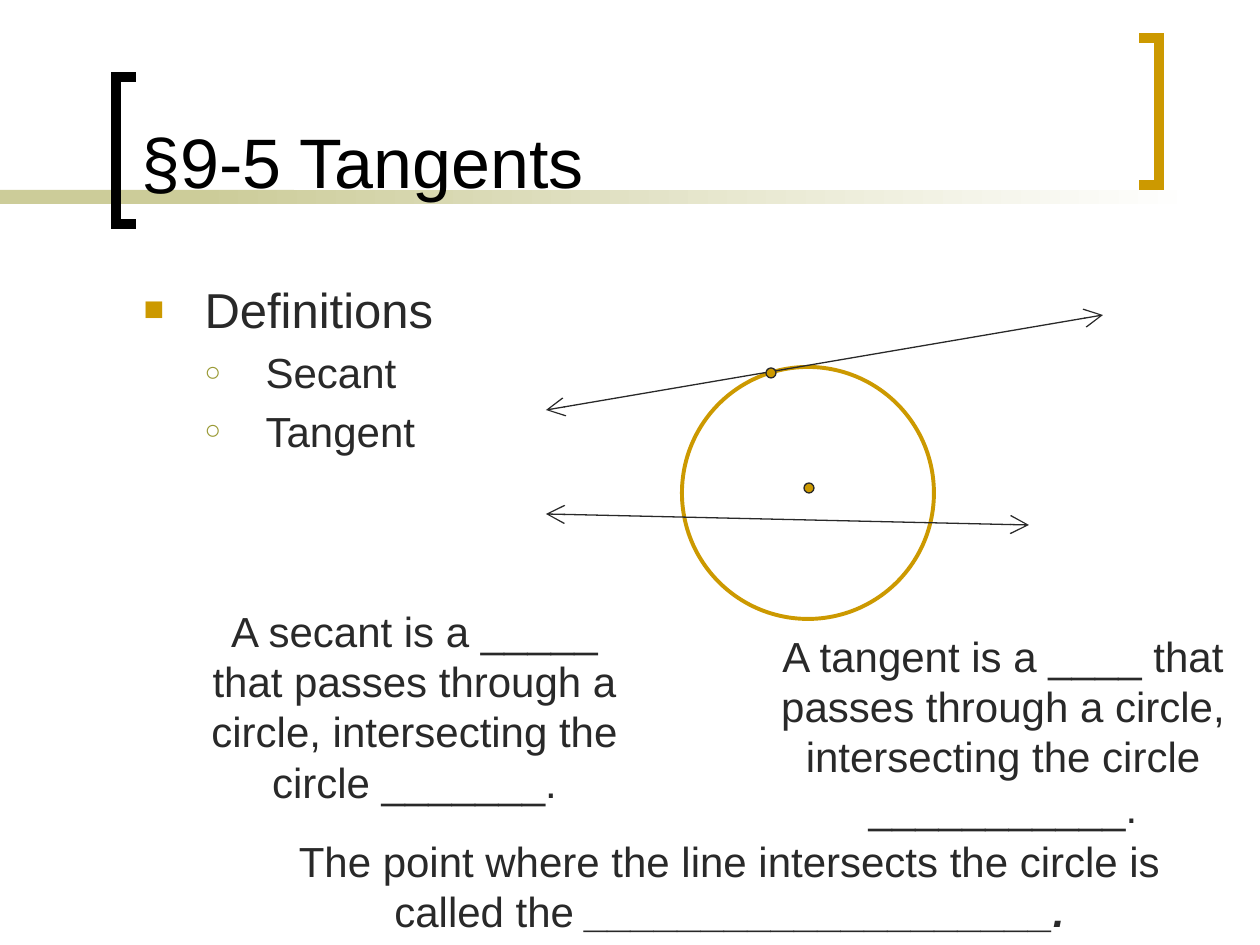
from lxml import etree
from pptx import Presentation, util as u
from pptx.dml.color import RGBColor
from pptx.enum import shapes, text
from pptx.oxml.ns import qn

BLACK = RGBColor(0x00, 0x00, 0x00)
INK = RGBColor(0x29, 0x29, 0x29)
GOLD = RGBColor(0xCC, 0x99, 0x00)
OLIVE = RGBColor(0x99, 0x99, 0x33)
SAND = RGBColor(0xCC, 0xCC, 0x99)
WHITE = RGBColor(0xFF, 0xFF, 0xFF)
FONT = "Arial"
PX = 914400 / 126

# All places are left, top, width, height in px.
TITLE = "§9-5 Tangents"
TITLE_BOX = (129, 14, 987, 195)
OUTLINE_BOX = (131, 273, 467, 630)
# text, level
OUTLINE = [("Definitions", 0), ("Secant", 1), ("Tangent", 1)]
# size in pt, indent in px, hanging in px, bullet, colour, bullet size in %
LEVELS = [(28, 61, 61, "■", GOLD, 70), (24, 122, 61, "○", OLIVE, 65)]

BANDS = [((0, 190, 294, 14), SAND), ((199, 190, 998, 14), WHITE)]  # box, end colour
# open side x, spine x, top, bottom, colour
BRACKETS = [(136, 116, 77, 224, BLACK), (1139, 1159, 38, 185, GOLD)]

CIRCLE = (682, 367, 252, 252)
CENTRE_POINT = (809, 488)
TANGENT_POINT = (771, 373)
POINT_SIZE = 10
SECANT_LINE = (546, 514, 1029, 525)
TANGENT_LINE = (546, 410, 1103, 315)

# box, runs of text with emphasis
STATEMENTS = [
    ((199, 599, 431, 217),
     [("A secant is a _____ that passes through a circle, intersecting the circle _______.", False)]),
    ((766, 624, 474, 217),
     [("A tangent is a ____ that passes through a circle, intersecting the circle ___________.", False)]),
    ((252, 829, 955, 115),
     [("The point where the line intersects the circle is called the ", False),
      ("____________________.", True)]),
]


def px(*values):
    return [u.Emu(round(value * PX)) for value in values]


def style(font, size, color):
    font.name, font.size, font.color.rgb = FONT, u.Pt(size), color


def add_child(parent, tag, **attributes):
    return etree.SubElement(parent, qn(tag), attributes)


def place(shape, box):
    shape.left, shape.top, shape.width, shape.height = px(*box)


def add_bands(slide):
    for box, end_color in BANDS:
        band = slide.shapes.add_shape(shapes.MSO_SHAPE.RECTANGLE, *px(*box))
        band.shadow.inherit = False
        band.line.fill.background()
        if end_color == SAND:
            band.fill.solid()
            band.fill.fore_color.rgb = SAND
            continue
        band.fill.gradient()
        band.fill.gradient_angle = 0
        for stop, position, color in zip(band.fill.gradient_stops, (0, 1), (SAND, end_color)):
            stop.position, stop.color.rgb = position, color


def add_brackets(slide):
    for open_x, spine_x, top, bottom, color in BRACKETS:
        builder = slide.shapes.build_freeform(open_x, top, scale=PX)
        builder.add_line_segments([(spine_x, top), (spine_x, bottom), (open_x, bottom)], close=False)
        bracket = builder.convert_to_shape()
        bracket.shadow.inherit = False
        bracket.fill.background()
        bracket.line.color.rgb, bracket.line.width = color, u.Pt(6)
        add_child(bracket.line._ln, "a:miter", lim="800000")


def add_title(slide):
    title = slide.shapes.title
    place(title, TITLE_BOX)
    frame = title.text_frame
    frame.text = TITLE
    frame.auto_size = text.MSO_AUTO_SIZE.NONE
    frame.vertical_anchor = text.MSO_ANCHOR.BOTTOM
    frame.paragraphs[0].alignment = text.PP_ALIGN.LEFT
    style(frame.paragraphs[0].font, 40, BLACK)


def add_outline(slide):
    body = slide.placeholders[1]
    place(body, OUTLINE_BOX)
    frame = body.text_frame
    frame.text = "\n".join(words for words, _ in OUTLINE)
    frame.auto_size = text.MSO_AUTO_SIZE.NONE
    for index, (paragraph, (_, level)) in enumerate(zip(frame.paragraphs, OUTLINE)):
        size, indent, hanging, bullet, color, percent = LEVELS[level]
        paragraph.level = level
        paragraph.space_before = u.Pt(size * 0.2 if index else 0)
        properties = paragraph._p.get_or_add_pPr()
        left, hang = px(indent, hanging)
        properties.set("marL", str(left))
        properties.set("indent", str(-hang))
        add_child(add_child(properties, "a:buClr"), "a:srgbClr", val=str(color))
        add_child(properties, "a:buSzPct", val=str(percent * 1000))
        add_child(properties, "a:buFont", typeface=FONT)
        add_child(properties, "a:buChar", char=bullet)
        style(paragraph.font, size, INK)


def add_ellipse(slide, box, line_color, line_width, fill_color=None):
    ellipse = slide.shapes.add_shape(shapes.MSO_SHAPE.OVAL, *px(*box))
    ellipse.shadow.inherit = False
    ellipse.line.color.rgb, ellipse.line.width = line_color, u.Pt(line_width)
    if fill_color is None:
        ellipse.fill.background()
    else:
        ellipse.fill.solid()
        ellipse.fill.fore_color.rgb = fill_color


def add_point(slide, centre):
    x, y = centre
    box = (x - POINT_SIZE / 2, y - POINT_SIZE / 2, POINT_SIZE, POINT_SIZE)
    add_ellipse(slide, box, INK, 0.75, GOLD)


def add_double_arrow(slide, ends):
    arrow = slide.shapes.add_connector(shapes.MSO_CONNECTOR.STRAIGHT, *px(*ends))
    arrow.line.color.rgb, arrow.line.width = INK, u.Pt(0.75)
    for tag in ("a:headEnd", "a:tailEnd"):
        add_child(arrow.line._ln, tag, type="arrow", w="lg", len="lg")
    add_child(arrow._element.spPr, "a:effectLst")


def add_statement(slide, box, runs):
    frame = slide.shapes.add_textbox(*px(*box)).text_frame
    frame.word_wrap = True
    paragraph = frame.paragraphs[0]
    paragraph.alignment = text.PP_ALIGN.CENTER
    style(paragraph.font, 24, INK)
    for words, emphasised in runs:
        run = paragraph.add_run()
        run.text = words
        if emphasised:
            run.font.bold = run.font.italic = True


def main():
    presentation = Presentation()
    presentation.slide_width, presentation.slide_height = px(1260, 945)
    slide = presentation.slides.add_slide(presentation.slide_layouts[1])
    placeholders = list(slide.placeholders)
    add_bands(slide)
    add_brackets(slide)
    for placeholder in placeholders:  # bring the text in front of the bands
        slide.shapes._spTree.append(placeholder._element)
    add_title(slide)
    add_outline(slide)
    add_ellipse(slide, CIRCLE, GOLD, 2.25)
    add_point(slide, CENTRE_POINT)
    add_double_arrow(slide, SECANT_LINE)
    add_double_arrow(slide, TANGENT_LINE)
    add_point(slide, TANGENT_POINT)
    for box, runs in STATEMENTS:
        add_statement(slide, box, runs)
    presentation.save("out.pptx")


if __name__ == "__main__":
    main()
